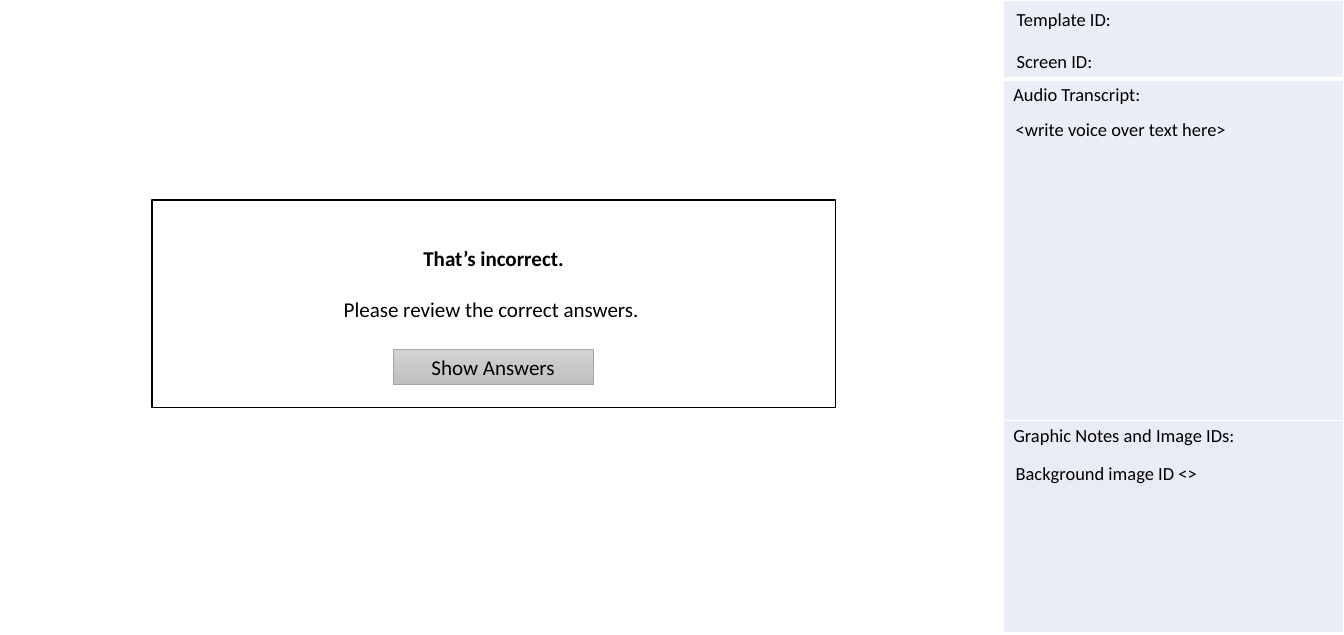
from lxml import etree
from pptx import Presentation
from pptx import util as u
from pptx.dml.color import RGBColor
from pptx.enum import shapes, text
from pptx.oxml.ns import qn

PX = 914400 / 94.8
BLACK = RGBColor(0x00, 0x00, 0x00)
WHITE = RGBColor(0xFF, 0xFF, 0xFF)
PALE_BLUE = RGBColor(0xEA, 0xEF, 0xF7)
PALE_VIOLET = RGBColor(0xE9, 0xEB, 0xF5)
BUTTON_TOP = RGBColor(0xD2, 0xD2, 0xD2)
BUTTON_BOTTOM = RGBColor(0xC0, 0xC0, 0xC0)
BUTTON_EDGE = RGBColor(0xA5, 0xA5, 0xA5)


def px(length):
    return u.Emu(round(length * PX))


def write(para, words, size, bold=False):
    para.text = words
    font = para.font
    for target in [font] + [span.font for span in para.runs]:
        target.name = "Calibri"
        target.size = u.Pt(size)
        target.bold = bold
        target.color.rgb = BLACK


def set_margins(holder, across, top, bottom):
    holder.margin_left = holder.margin_right = px(across)
    holder.margin_top = px(top)
    holder.margin_bottom = px(bottom)


def add_label(page, words, left, top):
    box = page.shapes.add_textbox(px(left), px(top), px(336), px(32))
    box.text_frame.word_wrap = True
    write(box.text_frame.paragraphs[0], words, 14)


def add_box(page, left, top, width, height, edge, weight):
    box = page.shapes.add_shape(
        shapes.MSO_SHAPE.RECTANGLE, px(left), px(top), px(width), px(height))
    box.shadow.inherit = False
    box.line.color.rgb = edge
    box.line.width = u.Pt(weight)
    box.text_frame.word_wrap = True
    return box


def add_message(page):
    box = add_box(page, 152, 200, 683, 207, BLACK, 1)
    box.fill.solid()
    box.fill.fore_color.rgb = WHITE
    frame = box.text_frame
    frame.vertical_anchor = text.MSO_ANCHOR.TOP
    set_margins(frame, 20, 45, 20)
    heading, advice = frame.paragraphs[0], frame.add_paragraph()
    write(heading, "That’s incorrect.", 16, True)
    write(advice, "Please review the correct answers. ", 16)
    advice.space_before = u.Pt(19.5)
    for para in (heading, advice):
        para.alignment = text.PP_ALIGN.CENTER


def add_button(page):
    box = add_box(page, 393, 349, 200, 35, BUTTON_EDGE, 0.5)
    box.fill.gradient()
    box.fill.gradient_angle = 270
    for stop, colour in zip(box.fill.gradient_stops, (BUTTON_TOP, BUTTON_BOTTOM)):
        stop.color.rgb = colour
    frame = box.text_frame
    frame.vertical_anchor = text.MSO_ANCHOR.MIDDLE
    set_margins(frame, 0, 5, 5)
    write(frame.paragraphs[0], "Show Answers", 16)
    frame.paragraphs[0].alignment = text.PP_ALIGN.CENTER


def set_borders(cell, top, bottom):
    properties = cell._tc.get_or_add_tcPr()
    for side, weight in (("L", 1), ("R", 1), ("T", top), ("B", bottom)):
        line = etree.SubElement(properties, qn(f"a:ln{side}"), w=str(u.Pt(weight)))
        fill = etree.SubElement(line, qn("a:solidFill"))
        etree.SubElement(fill, qn("a:srgbClr"), val=str(WHITE))


def add_side_panel(page):
    rows = [
        ("", 79, PALE_BLUE, 1, 3),
        ("Audio Transcript:", 341, PALE_BLUE, 3, 1),
        ("Graphic Notes and Image IDs:", 212, PALE_VIOLET, 1, 1),
    ]
    height = sum(row[1] for row in rows)
    table = page.shapes.add_table(
        len(rows), 1, px(1003), px(0), px(340), px(height)).table
    table.first_row = False
    table.horz_banding = False
    for index, (words, tall, colour, top, bottom) in enumerate(rows):
        table.rows[index].height = px(tall)
        cell = table.cell(index, 0)
        set_margins(cell, 10, 5, 5)
        set_borders(cell, top, bottom)
        cell.fill.solid()
        cell.fill.fore_color.rgb = colour
        if words:
            write(cell.text_frame.paragraphs[0], words, 14)


def main():
    deck = Presentation()
    deck.slide_width, deck.slide_height = u.Cm(36), u.Cm(17)
    page = deck.slides.add_slide(deck.slide_layouts[6])
    add_side_panel(page)
    add_label(page, "Screen ID:", 1007, 45)
    add_label(page, "Template ID:", 1007, 3)
    add_label(page, "<write voice over text here>", 1006, 113)
    add_label(page, "Background image ID <>", 1006, 457)
    add_message(page)
    add_button(page)
    deck.save("out.pptx")


if __name__ == "__main__":
    main()
